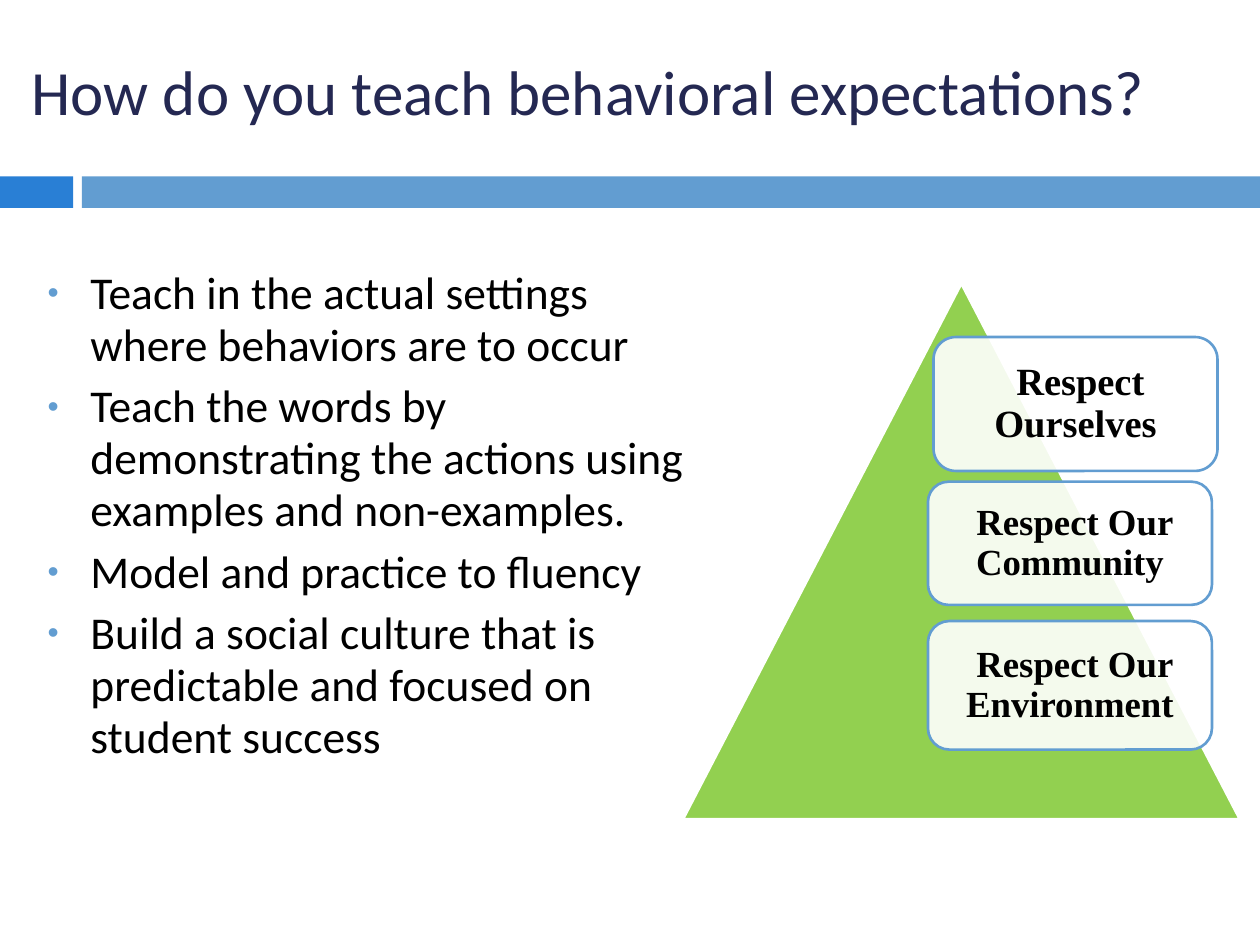
import lxml.etree
import pptx
import pptx.util
import pptx.dml.color
import pptx.enum.shapes
import pptx.enum.text
import pptx.oxml.ns

WIDTH, HEIGHT = 10, 7.5
BLUE, ACCENT, NAVY, GREEN = "629DD1", "297FD5", "242852", "92D050"
SHAPES = pptx.enum.shapes.MSO_SHAPE
ALIGN = pptx.enum.text.PP_ALIGN
ANCHOR = pptx.enum.text.MSO_ANCHOR
ADVICE = [
    "Teach in the actual settings where behaviors are to occur",
    "Teach the words by demonstrating the actions using examples and non-examples.",
    "Model and practice to fluency",
    "Build a social culture that is predictable and focused on student success",
]
RESPECTS = [
    (" Respect Ourselves", 22, (0.45, 0.10, 0.51, 0.25)),
    (" Respect Our Community", 21, (0.44, 0.37, 0.51, 0.23)),
    (" Respect Our Environment", 21, (0.44, 0.63, 0.51, 0.24)),
]


def color(value):
    """Return the colour for a hex string."""
    return pptx.dml.color.RGBColor.from_string(value)


def inches(box):
    """Convert a box in inches to lengths."""
    return [pptx.util.Inches(length) for length in box]


def within(box, shares):
    """Return the part of a box given as shares of its size."""
    left, top, width, height = box
    x, y, wide, high = shares
    return left + x * width, top + y * height, wide * width, high * height


def add_element(parent, tag, **attributes):
    """Append a drawing element with its attributes."""
    return lxml.etree.SubElement(parent, pptx.oxml.ns.qn(tag), attributes)


def add_block(page, kind, box, fill, line=None):
    """Add a flat shape with an optional outline."""
    block = page.shapes.add_shape(kind, *inches(box))
    block.shadow.inherit = False
    block.fill.solid()
    block.fill.fore_color.rgb = color(fill)
    if line:
        block.line.color.rgb = color(line)
        block.line.width = pptx.util.Pt(1.5)
    else:
        block.line.fill.background()
    return block


def set_font(para, name, size, tint, bold=False):
    """Format every run of a paragraph."""
    for span in para.runs:
        span.font.name = name
        span.font.size = pptx.util.Pt(size)
        span.font.color.rgb = color(tint)
        span.font.bold = bold


def add_band(page, box):
    """Draw the two-part band below the title."""
    for shares, fill in [((0, 0, 0.058, 1), ACCENT), ((0.065, 0, 0.935, 1), BLUE)]:
        add_block(page, SHAPES.RECTANGLE, within(box, shares), fill)


def set_title(page, box, text):
    """Place and format the title placeholder."""
    title = page.shapes.title
    title.left, title.top, title.width, title.height = inches(box)
    frame = title.text_frame
    frame.text = text
    frame.auto_size = pptx.enum.text.MSO_AUTO_SIZE.NONE
    frame.vertical_anchor = ANCHOR.TOP
    frame.margin_left = frame.margin_right = frame.margin_top = frame.margin_bottom = 0
    para = frame.paragraphs[0]
    para.alignment = ALIGN.LEFT
    set_font(para, "Calibri", 36, NAVY)


def add_bullets(page, box, lines):
    """Add the bulleted advice."""
    frame = page.shapes.add_textbox(*inches(box)).text_frame
    frame.word_wrap = True
    frame.text = "\n".join(lines)
    for para in frame.paragraphs:
        para.line_spacing = 0.95
        para.space_before = pptx.util.Pt(5.5)
        set_font(para, "Calibri", 26, "000000")
        properties = para._p.get_or_add_pPr()
        properties.set("marL", str(pptx.util.Inches(0.7)))
        properties.set("indent", str(pptx.util.Inches(-0.34)))
        tint = add_element(properties, "a:buClr")
        add_element(tint, "a:srgbClr", val=BLUE)
        add_element(properties, "a:buSzPct", val="70000")
        add_element(properties, "a:buFont", typeface="Arial")
        add_element(properties, "a:buChar", char="•")


def add_pyramid(page, box, cards):
    """Draw the triangle with its translucent cards."""
    add_block(page, SHAPES.ISOSCELES_TRIANGLE, box, GREEN, "FFFFFF")
    for text, size, shares in cards:
        card = add_block(page, SHAPES.ROUNDED_RECTANGLE, within(box, shares), "FFFFFF", BLUE)
        fill = card._element.spPr.find(pptx.oxml.ns.qn("a:solidFill"))
        add_element(fill[0], "a:alpha", val="90000")
        frame = card.text_frame
        frame.word_wrap = True
        frame.vertical_anchor = ANCHOR.MIDDLE
        frame.text = text
        para = frame.paragraphs[0]
        para.alignment = ALIGN.CENTER
        para.line_spacing = 0.9
        set_font(para, "Times New Roman", size, "000000", True)


def main():
    """Build and save the slide."""
    deck = pptx.Presentation()
    deck.slide_width, deck.slide_height = inches((WIDTH, HEIGHT))
    page = deck.slides.add_slide(deck.slide_layouts[5])
    slide = (0, 0, WIDTH, HEIGHT)
    add_band(page, (0, 1.4, WIDTH, 0.25))
    add_pyramid(page, within(slide, (0.542, 0.3, 0.442, 0.567)), RESPECTS)
    set_title(page, (0.25, 0.42, 9.42, 0.95), "How do you teach behavioral expectations?")
    add_bullets(page, (-0.08, 2.08, 5.83, 5), ADVICE)
    deck.save("out.pptx")


if __name__ == "__main__":
    main()
